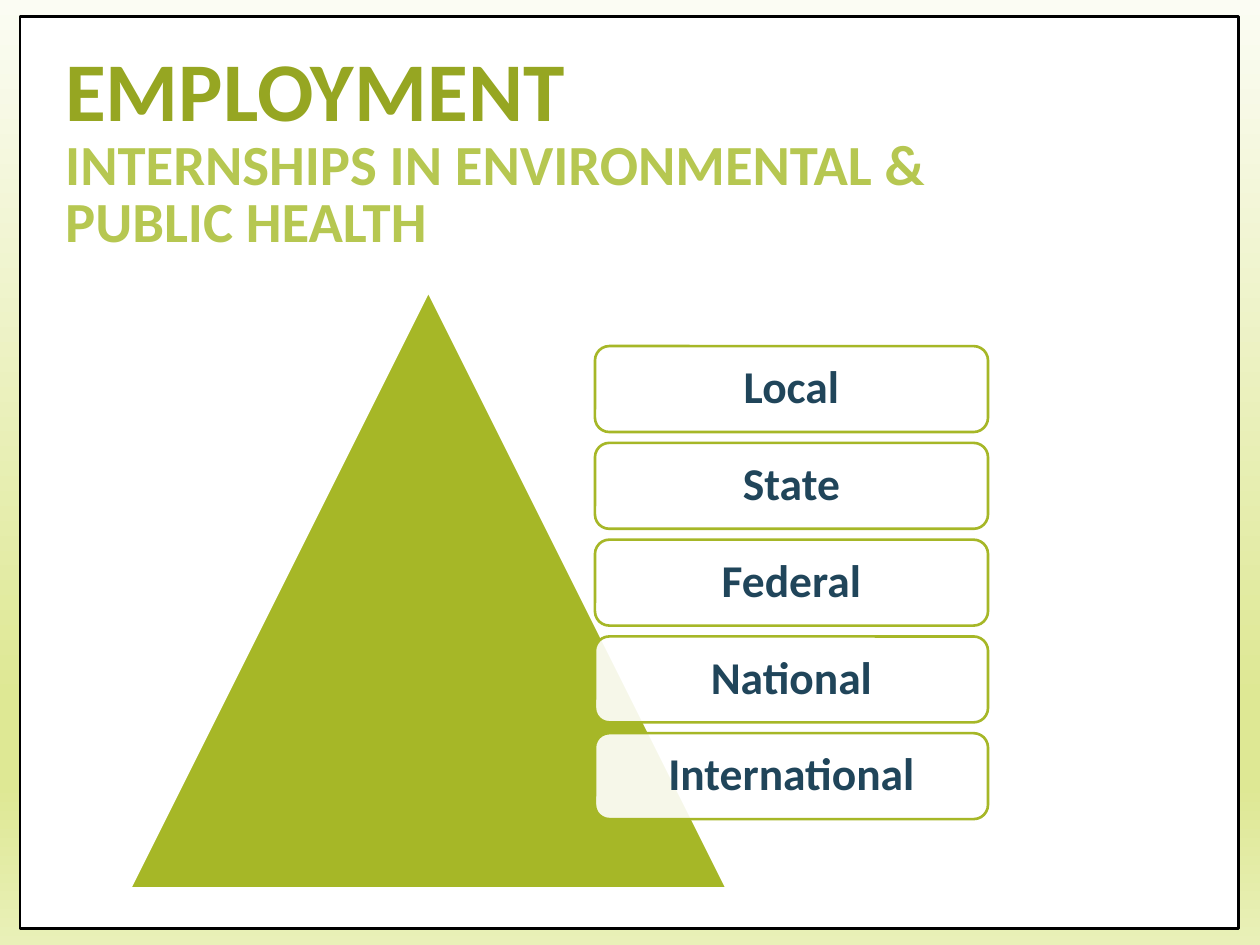
from lxml import etree
from pptx import Presentation
from pptx import util as u
from pptx.dml.color import RGBColor
from pptx.enum import shapes, text
from pptx.oxml import ns

Pt = u.Pt
WHITE = RGBColor(0xFF, 0xFF, 0xFF)
BLACK = RGBColor(0, 0, 0)
GREEN = RGBColor(0xA6, 0xB7, 0x27)
OLIVE = RGBColor(0x96, 0xA6, 0x22)
LIME = RGBColor(0xB6, 0xC7, 0x51)
NAVY = RGBColor(0x20, 0x45, 0x5A)
PALE = RGBColor(0xFB, 0xFC, 0xF3)
LEAF = RGBColor(0xDE, 0xE8, 0x94)
MIST = RGBColor(0xE9, 0xF0, 0xB8)
STOPS = [(0, PALE), (74, LEAF), (83, LEAF), (100, MIST)]
LEVELS = ["Local", "State", "Federal", "National", "International"]


class Deck:
    face = "Calibri"

    def __init__(self, wide, high):
        self.prs = Presentation()
        self.prs.slide_width, self.prs.slide_height = Pt(wide), Pt(high)
        self.slide = self.prs.slides.add_slide(self.prs.slide_layouts[6])

    def backdrop(self, stops):
        """Fill the background with a gradient from top to bottom."""
        fill = self.slide.background.fill
        fill.gradient()
        fill.gradient_angle = 270
        group = next(self.slide.element.iter(ns.qn("a:gsLst")))
        for old in list(group):
            group.remove(old)
        for pos, color in stops:
            stop = etree.SubElement(group, ns.qn("a:gs"), pos=str(pos * 1000))
            etree.SubElement(stop, ns.qn("a:srgbClr"), val=str(color))

    def shape(self, kind, box, fill, line, width, alpha=None):
        item = self.slide.shapes.add_shape(kind, *map(Pt, box))
        item.shadow.inherit = False
        item.fill.solid()
        item.fill.fore_color.rgb = fill
        item.line.color.rgb = line
        item.line.width = Pt(width)
        if alpha is not None:
            color = item.element.spPr.find(ns.qn("a:solidFill"))[0]
            etree.SubElement(color, ns.qn("a:alpha"), val=str(alpha * 1000))
        return item

    def style(self, font, size, color):
        font.name, font.size, font.bold = self.face, Pt(size), True
        font.color.rgb = color

    def title(self, box, rows):
        """Write (text, size, color) rows as lines of one paragraph."""
        frame = self.slide.shapes.add_textbox(*map(Pt, box)).text_frame
        frame.word_wrap = True
        frame.vertical_anchor = text.MSO_ANCHOR.BOTTOM
        para = frame.paragraphs[0]
        para.line_spacing = 0.85
        for i, (words, size, color) in enumerate(rows):
            if i:
                para.add_line_break()
            run = para.add_run()
            run.text = words
            self.style(run.font, size, color)

    def label(self, box, words):
        item = self.shape(shapes.MSO_SHAPE.ROUNDED_RECTANGLE, box,
                          WHITE, GREEN, 1.5, alpha=90)
        frame = item.text_frame
        frame.word_wrap = True
        frame.vertical_anchor = text.MSO_ANCHOR.MIDDLE
        frame.margin_left = frame.margin_right = Pt(8)
        frame.margin_top = frame.margin_bottom = Pt(8)
        para = frame.paragraphs[0]
        para.text = words
        para.alignment = text.PP_ALIGN.CENTER
        para.line_spacing = 0.9
        self.style(para.font, 26, NAVY)


def main():
    deck = Deck(720, 540)
    deck.backdrop(STOPS)
    deck.shape(shapes.MSO_SHAPE.RECTANGLE, (11.5, 9.3, 696.3, 521.3),
               WHITE, BLACK, 1.5)
    deck.title((30.2, 28.8, 612, 120.2), [
        ("EMPLOYMENT", 47.7, OLIVE),
        ("INTERNSHIPS IN ENVIRONMENTAL &", 32.4, LIME),
        ("PUBLIC HEALTH", 32.4, LIME),
    ])
    deck.shape(shapes.MSO_SHAPE.ISOSCELES_TRIANGLE, (72, 163.5, 345.6, 345.6),
               GREEN, WHITE, 4.25)
    for i, words in enumerate(LEVELS):
        deck.label((340, 197.8 + i * 55.3, 224.6, 49.1), words)
    deck.prs.save("out.pptx")


if __name__ == "__main__":
    main()
